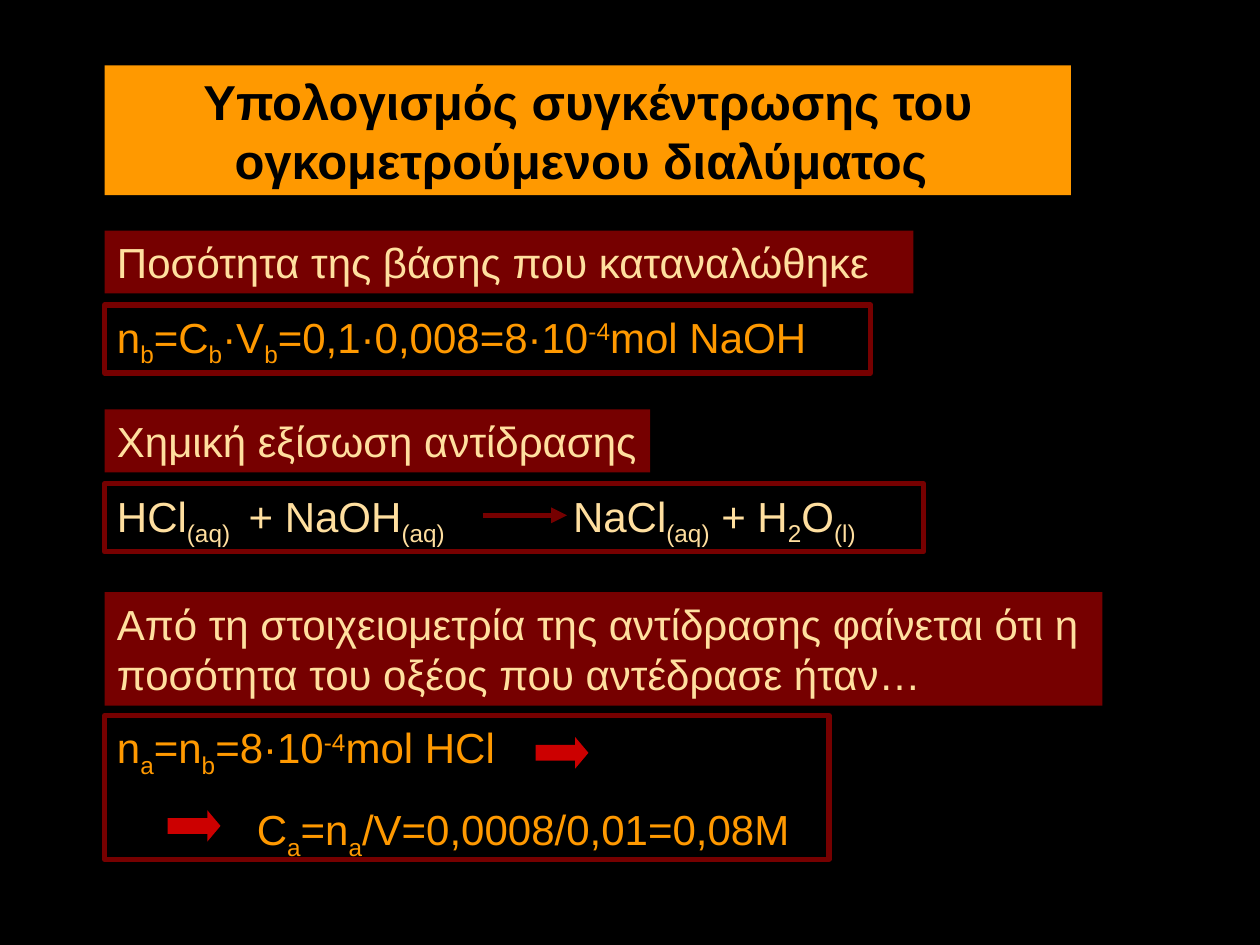
import pptx
import pptx.dml.color
import pptx.enum.shapes
import pptx.enum.text
import pptx.oxml
import pptx.oxml.ns
import pptx.util

Inches = pptx.util.Inches
Pt = pptx.util.Pt
RGBColor = pptx.dml.color.RGBColor
Shape = pptx.enum.shapes.MSO_SHAPE
Align = pptx.enum.text.PP_ALIGN

BLACK = RGBColor(0x00, 0x00, 0x00)
ORANGE = RGBColor(0xFF, 0x99, 0x00)
MAROON = RGBColor(0x76, 0x00, 0x00)
CREAM = RGBColor(0xFF, 0xDF, 0x9F)
RED = RGBColor(0xCC, 0x00, 0x00)
LEFT = 0.83
SUB, SUP = -25, 30


class Deck:
    """Draws the elements of the current slide in one style."""

    def __init__(self, font="Arial", size=24):
        self.font, self.size = font, size
        self.show = pptx.Presentation()
        self.show.slide_width, self.show.slide_height = Inches(10), Inches(7.5)
        self.slide = self.show.slides.add_slide(self.show.slide_layouts[6])
        fill = self.slide.background.fill
        fill.solid()
        fill.fore_color.rgb = BLACK

    def shape(self, kind, left, top, width, height, fill, line=None):
        shape = self.slide.shapes.add_shape(
            kind, Inches(left), Inches(top), Inches(width), Inches(height))
        shape.shadow.inherit = False
        shape.fill.solid()
        shape.fill.fore_color.rgb = fill
        if line is None:
            shape.line.fill.background()
        else:
            shape.line.color.rgb = line
            shape.line.width = Pt(3)
        return shape

    def runs(self, para, parts, color, size=None, bold=False):
        for part in parts:
            text, base = (part, 0) if isinstance(part, str) else part
            run = para.add_run()
            run.text = text
            run.font.name = self.font
            run.font.size = Pt(size or self.size)
            run.font.bold = bold
            run.font.color.rgb = color
            if base:
                run.font._element.set("baseline", str(base * 1000))

    def box(self, top, width, height, lines, color, fill, line=None,
            align=Align.LEFT, size=None, bold=False):
        shape = self.shape(Shape.RECTANGLE, LEFT, top, width, height, fill, line)
        frame = shape.text_frame
        frame.word_wrap = True
        frame.vertical_anchor = pptx.enum.text.MSO_ANCHOR.TOP
        for num, parts in enumerate(lines):
            para = frame.add_paragraph() if num else frame.paragraphs[0]
            para.alignment = align
            if num:
                para.space_before = Pt(14)
            self.runs(para, parts, color, size, bold)
        return frame

    def title(self, top, width, height, text):
        self.box(top, width, height, [[text]], BLACK, ORANGE,
                 align=Align.CENTER, size=28, bold=True)

    def label(self, top, width, height, text):
        self.box(top, width, height, [[text]], CREAM, MAROON)

    def sums(self, top, width, height, lines, color=ORANGE):
        return self.box(top, width, height, lines, color, BLACK, MAROON)

    def indent(self, para, left):
        para._p.get_or_add_pPr().set("marL", str(Inches(left)))

    def tab(self, para, left):
        props = para._p.get_or_add_pPr()
        props.append(pptx.oxml.parse_xml(
            f'<a:tabLst {pptx.oxml.ns.nsdecls("a")}>'
            f'<a:tab pos="{Inches(left)}" algn="l"/></a:tabLst>'))

    def arrow(self, left, top, right):
        line = self.slide.shapes.add_connector(
            pptx.enum.shapes.MSO_CONNECTOR.STRAIGHT,
            Inches(left), Inches(top), Inches(right), Inches(top))
        line.line.color.rgb = MAROON
        line.line.width = Pt(3)
        space = pptx.oxml.ns.nsdecls("a")
        props = line._element.spPr
        props.find(pptx.oxml.ns.qn("a:ln")).append(
            pptx.oxml.parse_xml(f'<a:tailEnd {space} type="triangle"/>'))
        props.append(pptx.oxml.parse_xml(f"<a:effectLst {space}/>"))

    def block(self, left, top):
        shape = self.shape(Shape.RIGHT_ARROW, left, top, 0.42, 0.25, RED)
        shape.adjustments[1] = 0.42


def main():
    deck = Deck()
    deck.title(0.52, 7.67, 1.03,
               "Υπολογισμός συγκέντρωσης του ογκομετρούμενου διαλύματος ")

    deck.label(1.83, 6.42, 0.5, "Ποσότητα της βάσης που καταναλώθηκε")
    deck.sums(2.42, 6.08, 0.54, [[
        "n", ("b", SUB), "=C", ("b", SUB), "·V", ("b", SUB),
        "=0,1·0,008=8·10", ("-4", SUP), "mol NaOH"]])

    deck.label(3.25, 4.33, 0.5, "Χημική εξίσωση αντίδρασης")
    frame = deck.sums(3.84, 6.5, 0.54, [[
        "HCl", ("(aq) ", SUB), " + NaOH", ("(aq)", SUB), "\tNaCl",
        ("(aq)", SUB), " + H", ("2", SUB), "O", ("(l)", SUB)]], CREAM)
    deck.tab(frame.paragraphs[0], 3.62)
    deck.arrow(3.83, 4.09, 4.5)

    deck.label(4.7, 7.92, 0.9, "Από τη στοιχειομετρία της αντίδρασης φαίνεται "
               "ότι η ποσότητα του οξέος που αντέδρασε ήταν…")
    frame = deck.sums(5.68, 5.75, 1.14, [
        ["n", ("a", SUB), "=n", ("b", SUB), "=8·10", ("-4", SUP), "mol HCl"],
        ["C", ("a", SUB), "=n", ("a", SUB), "/V=0,0008/0,01=0,08M"]])
    deck.indent(frame.paragraphs[1], 1.11)
    for left, top in ((4.25, 5.85), (1.33, 6.43)):
        deck.block(left, top)

    deck.show.save("out.pptx")


if __name__ == "__main__":
    main()
